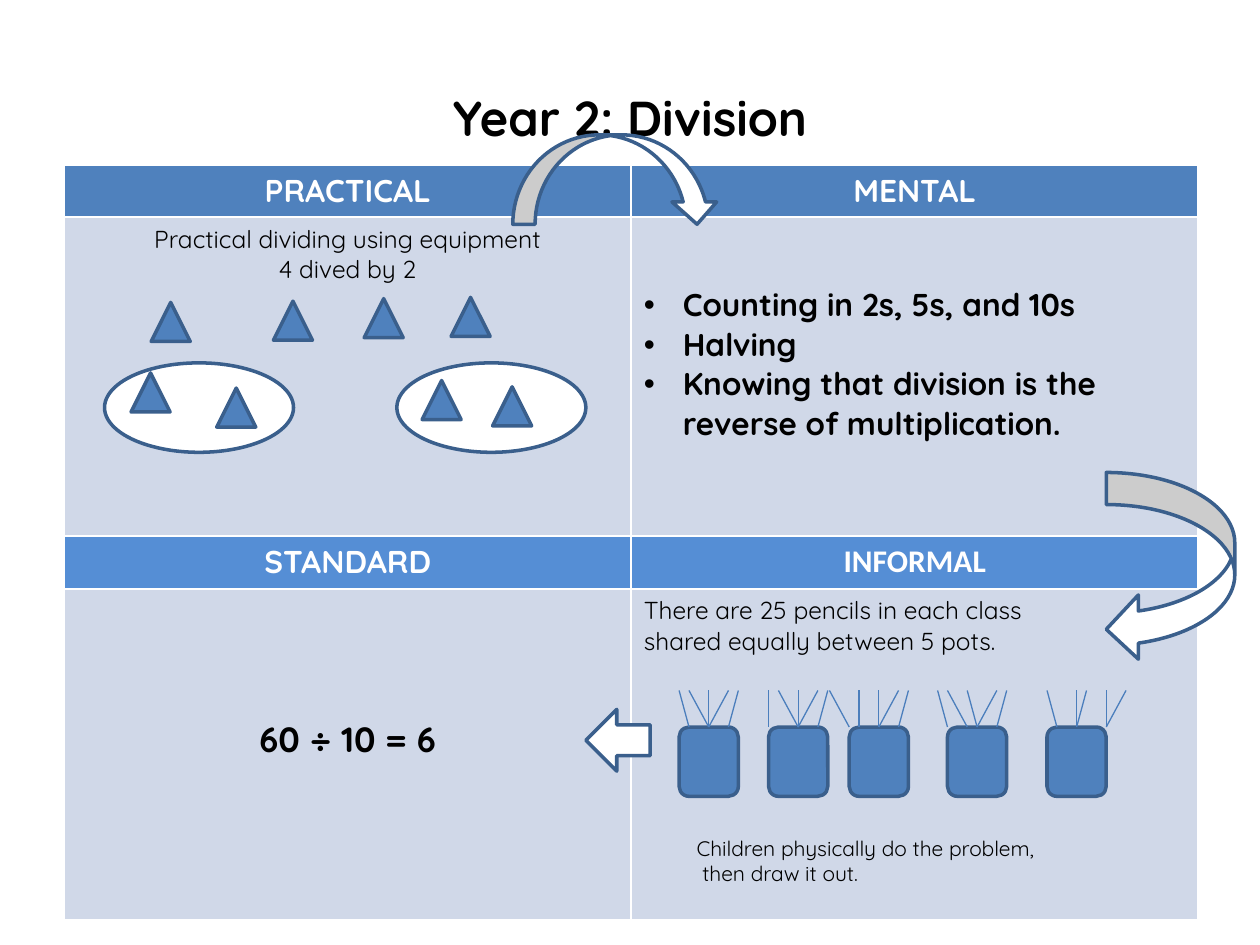
from dataclasses import dataclass

from lxml.etree import SubElement
from pptx import Presentation
from pptx.dml.color import RGBColor
from pptx.enum.shapes import MSO_CONNECTOR, MSO_SHAPE
from pptx.enum.text import MSO_ANCHOR, MSO_AUTO_SIZE, PP_ALIGN
from pptx.oxml.ns import qn
from pptx.util import Inches, Pt


@dataclass(frozen=True)
class Theme:
    font: str = "Quicksand"
    plain_font: str = "Calibri"
    black: str = "000000"
    white: str = "FFFFFF"
    blue: str = "4F81BD"
    light_blue: str = "558ED5"
    pale: str = "D0D8E8"
    outline: str = "3A5F8C"
    pencil: str = "4B7EBC"
    title: int = 28
    answer: int = 20
    heading: int = 18
    body: int = 14
    caption: int = 12


THEME = Theme()

TITLE = "Year 2: Division"
CAPTION = "Children physically do the problem,\n then draw it out."
HEADING = dict(size=THEME.heading, bold=True, color=THEME.white, align=PP_ALIGN.CENTER)

# Each cell: text, fill, space above the text, text format
CELLS = [
    [("PRACTICAL", THEME.blue, 0.05, HEADING),
     ("MENTAL", THEME.blue, 0.05, HEADING)],
    [("Practical dividing using equipment\n4 dived by 2", THEME.pale, 0.05,
      dict(size=THEME.body, align=PP_ALIGN.CENTER)),
     ("Counting in 2s, 5s, and 10s\nHalving\n"
      "Knowing that division is the reverse of multiplication.", THEME.pale, 0.54,
      dict(size=THEME.heading, bold=True, bullet=True))],
    [("STANDARD", THEME.light_blue, 0.05, HEADING),
     ("INFORMAL", THEME.light_blue, 0.05, {**HEADING, "font": THEME.plain_font})],
    [("60 ÷ 10 = 6", THEME.pale, 1.02,
      dict(size=THEME.answer, bold=True, align=PP_ALIGN.CENTER)),
     ("There are 25 pencils in each class\nshared equally between 5 pots.",
      THEME.pale, 0.05, dict(size=THEME.body))],
]
TABLE_LEFT, TABLE_TOP, COLUMN_WIDTH = 0.51, 1.31, 4.5
ROW_HEIGHTS = [0.41, 2.53, 0.42, 2.63]

COUNTER_SIZE = 0.31
LOOSE_COUNTERS = [(1.2, 2.4), (2.17, 2.39), (3.58, 2.36), (2.89, 2.37)]
GROUPS = [(0.83, 2.88), (3.15, 2.88)]
GROUPED_COUNTERS = [(1.04, 2.96), (1.72, 3.08), (3.35, 3.02), (3.91, 3.07)]

# Each pot: left edge, then its pencils as (tip, foot) in sixths of the pot width
POTS = [
    (5.39, [(0, 1), (6, 5), (3, 3), (1, 3), (5, 3)]),
    (6.1, [(0, 0), (6, 5), (3, 3), (1, 3), (5, 3)]),
    (6.74, [(6, 5), (-2, 0), (1, 1), (3, 3), (5, 3)]),
    (7.52, [(-1, 0), (6, 5), (5, 3), (0, 2), (2, 3)]),
    (8.31, [(8, 6), (6, 6), (3, 3), (0, 1), (4, 3)]),
]
POT_TOP, POT_WIDTH, POT_HEIGHT, PENCIL_TOP = 5.77, 0.47, 0.55, 5.48

ARROWS = [
    (MSO_SHAPE.CURVED_DOWN_ARROW, 4.07, 1.07, 1.64, 0.71),
    (MSO_SHAPE.CURVED_LEFT_ARROW, 8.78, 3.75, 1.02, 1.5),
    (MSO_SHAPE.LEFT_ARROW, 4.65, 5.63, 0.51, 0.49),
]


def add_bullet(para):
    properties = para._p.get_or_add_pPr()
    properties.set("marL", str(Inches(0.31)))
    properties.set("indent", str(-Inches(0.31)))
    SubElement(properties, qn("a:buFont"), typeface="Arial")
    SubElement(properties, qn("a:buChar"), char="•")


def write(frame, text, size, bold=False, color=THEME.black, font=THEME.font,
          align=PP_ALIGN.LEFT, bullet=False):
    frame.text = text
    for para in frame.paragraphs:
        para.alignment = align
        if bullet:
            add_bullet(para)
        for span in para.runs:
            span.font.name = font
            span.font.size = Pt(size)
            span.font.bold = bold
            span.font.color.rgb = RGBColor.from_string(color)


def add_outlined(page, kind, left, top, width, height, fill):
    shape = page.shapes.add_shape(
        kind, Inches(left), Inches(top), Inches(width), Inches(height))
    shape.shadow.inherit = False
    shape.fill.solid()
    shape.fill.fore_color.rgb = RGBColor.from_string(fill)
    shape.line.color.rgb = RGBColor.from_string(THEME.outline)
    shape.line.width = Pt(2)
    return shape


def add_title(page):
    title = page.shapes.title
    title.left, title.top = Inches(0.5), Inches(0.3)
    title.width, title.height = Inches(9), Inches(1.25)
    title.text_frame.vertical_anchor = MSO_ANCHOR.MIDDLE
    write(title.text_frame, TITLE, THEME.title, bold=True, align=PP_ALIGN.CENTER)


def add_methods_table(page):
    table = page.shapes.add_table(
        len(CELLS), 2, Inches(TABLE_LEFT), Inches(TABLE_TOP),
        Inches(2 * COLUMN_WIDTH), Inches(sum(ROW_HEIGHTS))).table
    table.horz_banding = False
    for column in table.columns:
        column.width = Inches(COLUMN_WIDTH)
    for row, height, contents in zip(table.rows, ROW_HEIGHTS, CELLS):
        row.height = Inches(height)
        for cell, (text, fill, space, style) in zip(row.cells, contents):
            cell.fill.solid()
            cell.fill.fore_color.rgb = RGBColor.from_string(fill)
            cell.margin_top = Inches(space)
            write(cell.text_frame, text, **style)


def add_counters(page, places):
    for left, top in places:
        add_outlined(page, MSO_SHAPE.ISOSCELES_TRIANGLE, left, top,
                     COUNTER_SIZE, COUNTER_SIZE, THEME.blue)


def add_pot(page, left, pencils):
    pot = add_outlined(page, MSO_SHAPE.ROUNDED_RECTANGLE, left, POT_TOP,
                       POT_WIDTH, POT_HEIGHT, THEME.blue)
    step = POT_WIDTH / 6
    for tip, foot in pencils:
        pencil = page.shapes.add_connector(
            MSO_CONNECTOR.STRAIGHT,
            Inches(left + tip * step), Inches(PENCIL_TOP),
            Inches(left + foot * step), Inches(POT_TOP))
        if foot == 3:
            pencil.end_connect(pot, 0)
        pencil.line.color.rgb = RGBColor.from_string(THEME.pencil)
        pencil.line.width = Pt(0.75)
        SubElement(pencil._element.spPr, qn("a:effectLst"))


def add_caption(page):
    box = page.shapes.add_textbox(
        Inches(5.43), Inches(6.58), Inches(3.09), Inches(0.5))
    box.text_frame.word_wrap = False
    box.text_frame.auto_size = MSO_AUTO_SIZE.SHAPE_TO_FIT_TEXT
    write(box.text_frame, CAPTION, THEME.caption)


def main():
    deck = Presentation()
    deck.slide_width, deck.slide_height = Inches(10), Inches(7.5)
    page = deck.slides.add_slide(deck.slide_layouts[5])

    add_title(page)
    add_methods_table(page)
    add_counters(page, LOOSE_COUNTERS)
    for left, top in GROUPS:
        add_outlined(page, MSO_SHAPE.OVAL, left, top, 1.5, 0.71, THEME.white)
    add_counters(page, GROUPED_COUNTERS)
    for left, pencils in POTS:
        add_pot(page, left, pencils)
    add_caption(page)
    for arrow in ARROWS:
        add_outlined(page, *arrow, THEME.white)

    deck.save("out.pptx")


if __name__ == "__main__":
    main()
